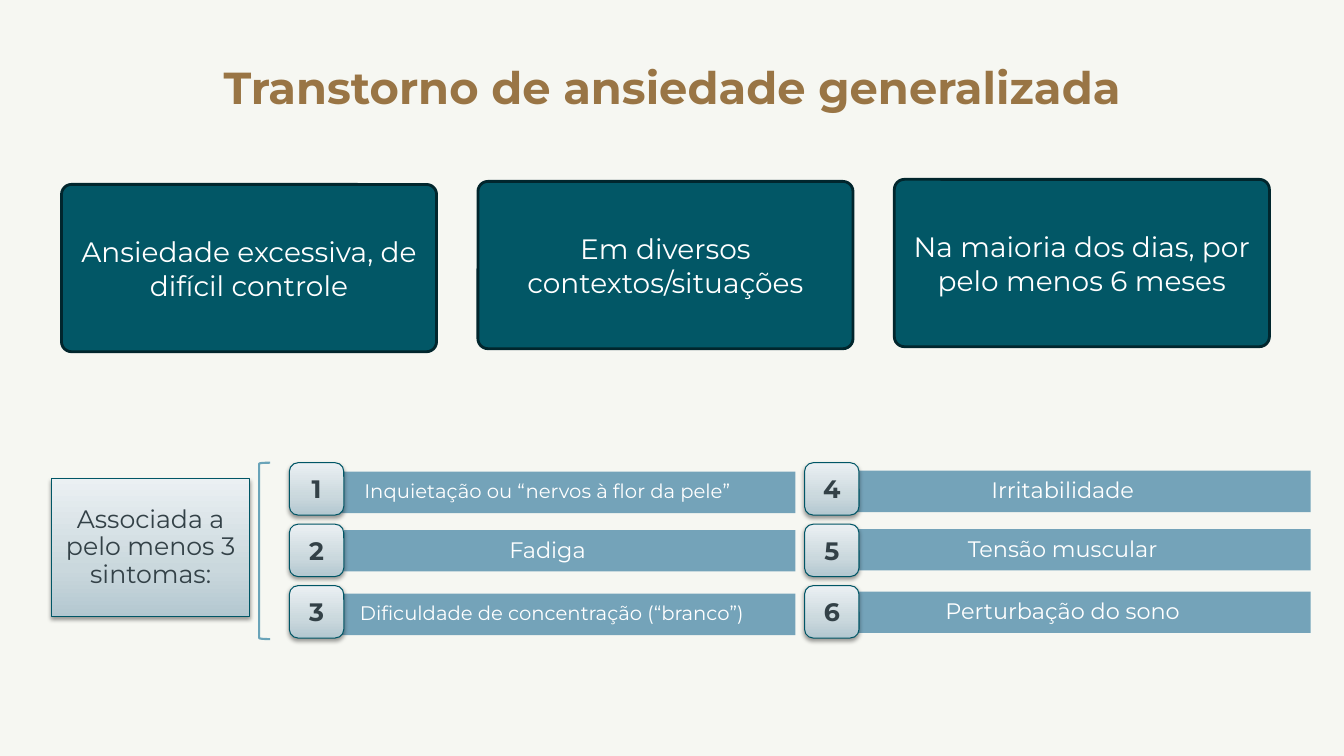
from copy import deepcopy

from pptx import Presentation
from pptx.dml.color import RGBColor
from pptx.enum.shapes import MSO_SHAPE
from pptx.enum.text import MSO_ANCHOR, PP_ALIGN
from pptx.oxml import parse_xml
from pptx.oxml.ns import nsdecls, qn
from pptx.util import Inches, Pt

# Content
TITLE = "Transtorno de ansiedade generalizada"
CRITERIA = [  # text, top
    ("Ansiedade excessiva, de difícil controle", 1.83),
    ("Em diversos contextos/situações", 1.8),
    ("Na maioria dos dias, por pelo menos 6 meses", 1.78),
]
LEAD = "Associada a pelo menos 3 sintomas:"
SYMPTOMS = [  # text, bar top, text size, left inset
    ("Inquietação ou “nervos à flor da pele”", 4.68, 14, 0.01),
    ("Fadiga", 5.26, 16, 0.01),
    ("Dificuldade de concentração (“branco”)", 5.89, 14, 0.1),
    ("Irritabilidade", 4.67, 16, 0.01),
    ("Tensão muscular", 5.25, 16, 0.01),
    ("Perturbação do sono", 5.87, 16, 0.01),
]
ROWS = 3
FONT = "Montserrat"
COLORS = {
    "page": "F6F7F2", "title": "997545", "card": "025766", "card_line": "01262D",
    "bar": "4988A7", "bracket": "6AA4B9", "badge_line": "005666",
    "dark": "334147", "white": "FFFFFF",
    "low": "B3C7D0", "middle": "CAD8DD", "high": "EBF0F3",
}


def color(name):
    return RGBColor.from_string(COLORS[name])


def write(shape, text, size, ink, bold=False, spacing=1.0, insets=None):
    frame = shape.text_frame
    settings = {"word_wrap": True, "vertical_anchor": MSO_ANCHOR.MIDDLE}
    if insets:
        sides = ("left", "top", "right", "bottom")
        settings.update({f"margin_{side}": Inches(value) for side, value in zip(sides, insets)})
    for name, value in settings.items():
        setattr(frame, name, value)
    para = frame.paragraphs[0]
    para.alignment = PP_ALIGN.CENTER
    para.line_spacing = spacing
    span = para.add_run()
    span.text = text
    for name, value in {"name": FONT, "size": Pt(size), "bold": bold}.items():
        setattr(span.font, name, value)
    span.font.color.rgb = color(ink)


def add_box(page, kind, place, fill=None, line=None, width=0.75):
    box = page.shapes.add_shape(kind, *map(Inches, place))
    box.shadow.inherit = False
    if fill:
        box.fill.solid()
        box.fill.fore_color.rgb = color(fill)
    else:
        box.fill.background()
    if line:
        box.line.color.rgb = color(line)
        box.line.width = Pt(width)
    else:
        box.line.fill.background()
    return box


def add_raised_box(page, kind, place):
    """Box with a vertical gradient and a soft shadow below."""
    box = add_box(page, kind, place, "middle", "badge_line")
    box.fill.gradient()
    box.fill.gradient_angle = 90
    stops = box._element.spPr.find(qn("a:gradFill")).find(qn("a:gsLst"))
    stops.append(deepcopy(stops[-1]))
    for stop, name, position in zip(box.fill.gradient_stops, ("low", "middle", "high"), (0, 0.35, 1)):
        stop.color.rgb = color(name)
        stop.position = position
    box._element.spPr.find(qn("a:effectLst")).append(parse_xml(
        f'<a:outerShdw {nsdecls("a")} blurRad="{Pt(3.1)}" dist="{Pt(1.6)}" dir="5400000" '
        'rotWithShape="0"><a:srgbClr val="000000"><a:alpha val="38000"/></a:srgbClr></a:outerShdw>'))
    return box


def main():
    deck = Presentation()
    deck.slide_width, deck.slide_height = Inches(13.33), Inches(7.5)
    page = deck.slides.add_slide(deck.slide_layouts[5])
    page.background.fill.solid()
    page.background.fill.fore_color.rgb = color("page")

    # Title
    title = page.shapes.title
    place = {"left": 1.45, "top": 0.47, "width": 10.44, "height": 0.85}
    for name, value in place.items():
        setattr(title, name, Inches(value))
    write(title, TITLE, 32, "title", True, 0.9, (0, 0, 0, 0))

    # Criteria cards
    for column, (text, top) in enumerate(CRITERIA):
        card = add_box(page, MSO_SHAPE.ROUNDED_RECTANGLE,
                       (0.61 + 4.13 * column, top, 3.72, 1.66), "card", "card_line", 2)
        card.adjustments[0] = 0.06
        write(card, text, 20, "white")

    # Lead box and bracket
    lead = add_raised_box(page, MSO_SHAPE.RECTANGLE, (0.51, 4.75, 1.97, 1.37))
    write(lead, LEAD, 18, "dark", spacing=0.9, insets=(0.01,) * 4)
    add_box(page, MSO_SHAPE.LEFT_BRACKET, (2.57, 4.59, 0.11, 1.75), line="bracket", width=1.5)

    # Symptom bars with numbered badges
    for index, (text, top, size, inset) in enumerate(SYMPTOMS):
        column, row = divmod(index, ROWS)
        left = 2.87 + 5.11 * column
        bar = add_box(page, MSO_SHAPE.RECTANGLE, (left + 0.1, top, 4.92, 0.41), "bar")
        tint = bar._element.spPr.find(qn("a:solidFill"))[0]
        tint.append(parse_xml(f'<a:alpha {nsdecls("a")} val="75000"/>'))
        write(bar, text, size, "white", spacing=0.9, insets=(inset, 0.01, 0.01, 0.01))
        badge = add_raised_box(page, MSO_SHAPE.ROUNDED_RECTANGLE,
                               (left, 4.59 + 0.61 * row, 0.54, 0.52))
        write(badge, str(index + 1), 18, "dark", True)

    deck.save("out.pptx")


if __name__ == "__main__":
    main()
